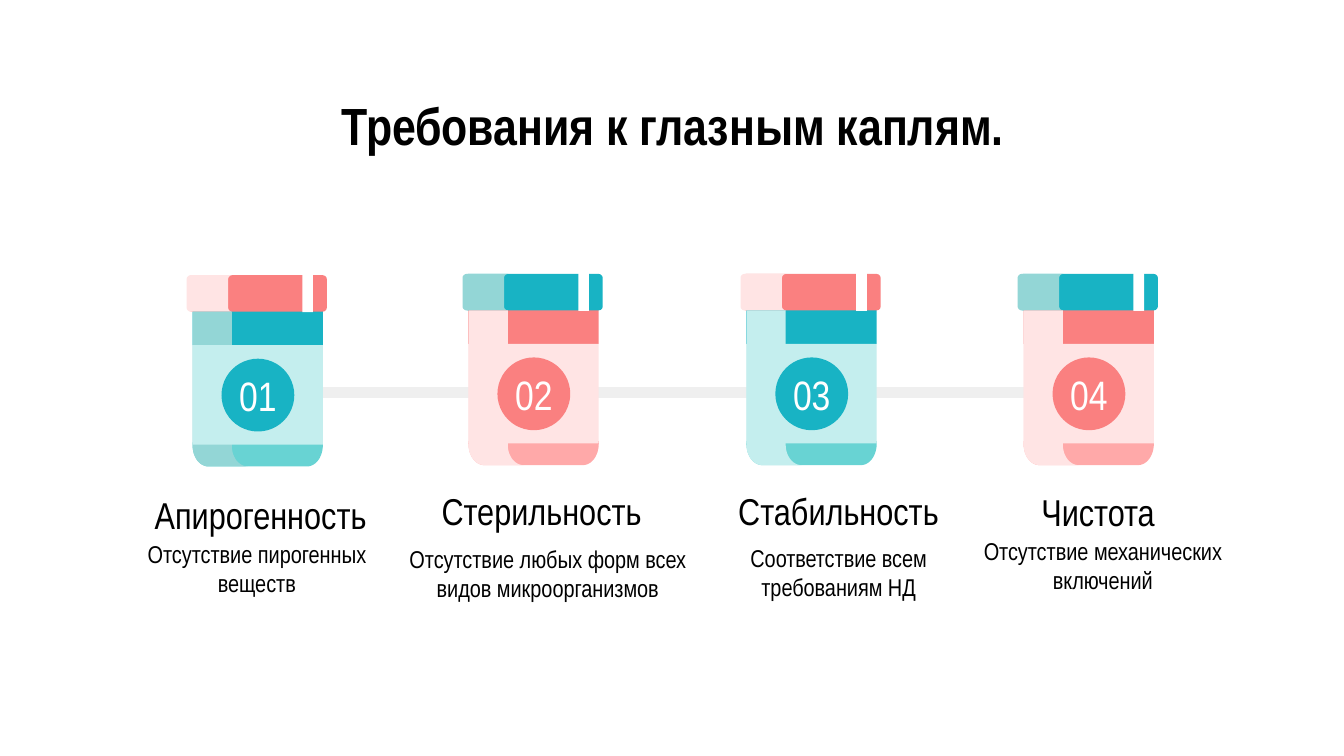
import math
from dataclasses import dataclass

from lxml import etree
from pptx import Presentation
from pptx.dml.color import RGBColor
from pptx.enum.shapes import MSO_CONNECTOR, MSO_SHAPE
from pptx.enum.text import MSO_ANCHOR, MSO_AUTO_SIZE, PP_ALIGN
from pptx.oxml.ns import qn
from pptx.util import Pt

STRAIGHT = MSO_CONNECTOR.STRAIGHT
RECTANGLE, ROUNDED, OVAL = MSO_SHAPE.RECTANGLE, MSO_SHAPE.ROUNDED_RECTANGLE, MSO_SHAPE.OVAL
TOP, MIDDLE = MSO_ANCHOR.TOP, MSO_ANCHOR.MIDDLE
CENTER = PP_ALIGN.CENTER
NO_AUTOFIT = MSO_AUTO_SIZE.NONE

BLACK = RGBColor(0x00, 0x00, 0x00)
WHITE = RGBColor(0xFF, 0xFF, 0xFF)
GRAY = RGBColor(0xEF, 0xEF, 0xEF)
TEAL = RGBColor(0x18, 0xB3, 0xC4)
TEAL_MEDIUM = RGBColor(0x68, 0xD3, 0xD3)
TEAL_SOFT = RGBColor(0x93, 0xD6, 0xD6)
TEAL_PALE = RGBColor(0xC4, 0xEE, 0xEE)
CORAL = RGBColor(0xFA, 0x80, 0x80)
CORAL_MEDIUM = RGBColor(0xFF, 0xA9, 0xA9)
CORAL_PALE = RGBColor(0xFF, 0xE4, 0xE4)

FONT = "Arial Narrow"
INSET = 7.2


@dataclass
class JarColors:
    main: RGBColor
    base: RGBColor
    label: RGBColor
    shade: RGBColor
    lid: RGBColor
    lid_shade: RGBColor


CORAL_JAR = JarColors(CORAL, CORAL_MEDIUM, CORAL_PALE, CORAL_PALE, TEAL, TEAL_SOFT)
TEAL_JAR = JarColors(TEAL, TEAL_MEDIUM, TEAL_PALE, TEAL_PALE, CORAL, CORAL_PALE)
SHADED_TEAL_JAR = JarColors(TEAL, TEAL_MEDIUM, TEAL_PALE, TEAL_SOFT, CORAL, CORAL_PALE)

# Jar left and top, colours, heading and its box, description and its box
REQUIREMENTS = [
    (100, 147.5, SHADED_TEAL_JAR, "Апирогенность", (66.2, 256.3, 147, 29),
     "Отсутствие пирогенных веществ", (64.1, 281.5, 147, 41)),
    (247.8, 146.8, CORAL_JAR, "Стерильность", (216.7, 254.2, 147, 33),
     "Отсутствие любых форм всех видов микроорганизмов", (199.4, 284.4, 188, 37)),
    (396.7, 146.8, TEAL_JAR, "Стабильность", (375.8, 254.2, 147, 29),
     "Соответствие всем требованиям НД", (361.4, 283.7, 175.7, 41)),
    (545.2, 146.8, CORAL_JAR, "Чистота", (514.8, 254.9, 147, 29),
     "Отсутствие механических включений", (507.6, 280.1, 166.3, 41)),
]


def style_fill(shape, color):
    shape.shadow.inherit = False
    shape.fill.solid()
    shape.fill.fore_color.rgb = color
    shape.line.fill.background()


def add_block(shapes, kind, left, top, width, height, color):
    shape = shapes.add_shape(kind, Pt(left), Pt(top), Pt(width), Pt(height))
    style_fill(shape, color)
    return shape


def add_outline(shapes, left, top, points, color):
    """Draw a closed outline whose points are relative to left and top."""
    corners = [(Pt(left + x), Pt(top + y)) for x, y in points]
    builder = shapes.build_freeform(*corners[0])
    builder.add_line_segments(corners[1:], close=True)
    style_fill(builder.convert_to_shape(), color)


def arc(center_x, center_y, radius_x, radius_y, start, end, steps=12):
    angles = [math.radians(start + (end - start) * i / steps) for i in range(steps + 1)]
    return [(center_x + radius_x * math.cos(a), center_y + radius_y * math.sin(a))
            for a in angles]


def write_text(shape, text, size, color, inset=INSET, anchor=TOP, bold=False, wrap=True):
    frame = shape.text_frame
    frame.word_wrap = wrap
    frame.auto_size = NO_AUTOFIT
    frame.vertical_anchor = anchor
    frame.margin_left = frame.margin_right = Pt(inset)
    frame.margin_top = frame.margin_bottom = Pt(inset)
    frame.text = text
    paragraph = frame.paragraphs[0]
    paragraph.alignment = CENTER
    font = paragraph.font
    font.name, font.size, font.bold = FONT, Pt(size), bold
    font.color.rgb = color


def add_title(slide, left, top, width, height):
    title = slide.shapes.title
    title.left, title.top, title.width, title.height = Pt(left), Pt(top), Pt(width), Pt(height)
    write_text(title, "Требования к глазным каплям.", 28, BLACK, bold=True)


def add_link(slide, left, right, y):
    link = slide.shapes.add_connector(STRAIGHT, Pt(left), Pt(y), Pt(right), Pt(y))
    link.line.color.rgb = GRAY
    link.line.width = Pt(6)
    etree.SubElement(link._element.spPr, qn("a:effectLst"))


def add_jar(slide, left, top, colors, number):
    shapes = slide.shapes.add_group_shape().shapes
    body_left, body_width = left + 3.2, 69.8
    # Rounded bottom and neck
    base = [(0, 89.5), (body_width, 89.5)]
    base += arc(body_width - 8.5, 91, 8.5, 11.4, 0, 90) + arc(8.5, 91, 8.5, 11.4, 90, 180)
    add_outline(shapes, body_left, top, base, colors.base)
    add_block(shapes, RECTANGLE, body_left, top + 18.5, body_width, 19, colors.main)
    # Lid with its shaded side
    lid = add_block(shapes, ROUNDED, left + 0.8, top, 74.3, 19.5, colors.lid)
    lid.adjustments[0] = 0.11
    lid_shade = arc(2.2, 2.2, 2.2, 2.2, 270, 180) + arc(2.2, 17.3, 2.2, 2.2, 180, 90)
    lid_shade += arc(24.4, 17.3, 2.2, 2.2, 90, 180) + arc(24.4, 2.2, 2.2, 2.2, 180, 270)
    add_outline(shapes, left, top, lid_shade, colors.lid_shade)
    # Shaded side of the body and label
    shade = [(21, 19.5), (0, 19.5)]
    shade += arc(8.5, 91.5, 8.5, 10.9, 180, 90) + arc(29.5, 91.5, 8.5, 10.9, 90, 180)
    add_outline(shapes, body_left, top, shade, colors.shade)
    add_block(shapes, RECTANGLE, body_left, top + 37.5, body_width, 53.3, colors.label)
    # Lid highlight and number
    add_block(shapes, RECTANGLE, left + 62, top - 0.5, 5.7, 20.2, WHITE)
    badge = add_block(shapes, OVAL, left + 18.7, top + 44.7, 39, 39, colors.main)
    write_text(badge, number, 22, WHITE, inset=0, anchor=MIDDLE, wrap=False)


def add_caption(slide, box, text, size):
    caption = slide.shapes.add_textbox(*[Pt(length) for length in box])
    write_text(caption, text, size, BLACK)


def main():
    presentation = Presentation()
    presentation.slide_width, presentation.slide_height = Pt(720), Pt(405)
    slide = presentation.slides.add_slide(presentation.slide_layouts[5])
    add_title(slide, 56.9, 42.5, 607, 39.6)
    add_link(slide, 154, 559, 210.2)
    for index, requirement in enumerate(REQUIREMENTS, 1):
        left, top, colors, heading, heading_box, description, description_box = requirement
        add_jar(slide, left, top, colors, f"{index:02}")
        add_caption(slide, heading_box, heading, 20)
        add_caption(slide, description_box, description, 13)
    presentation.save("out.pptx")


if __name__ == "__main__":
    main()
